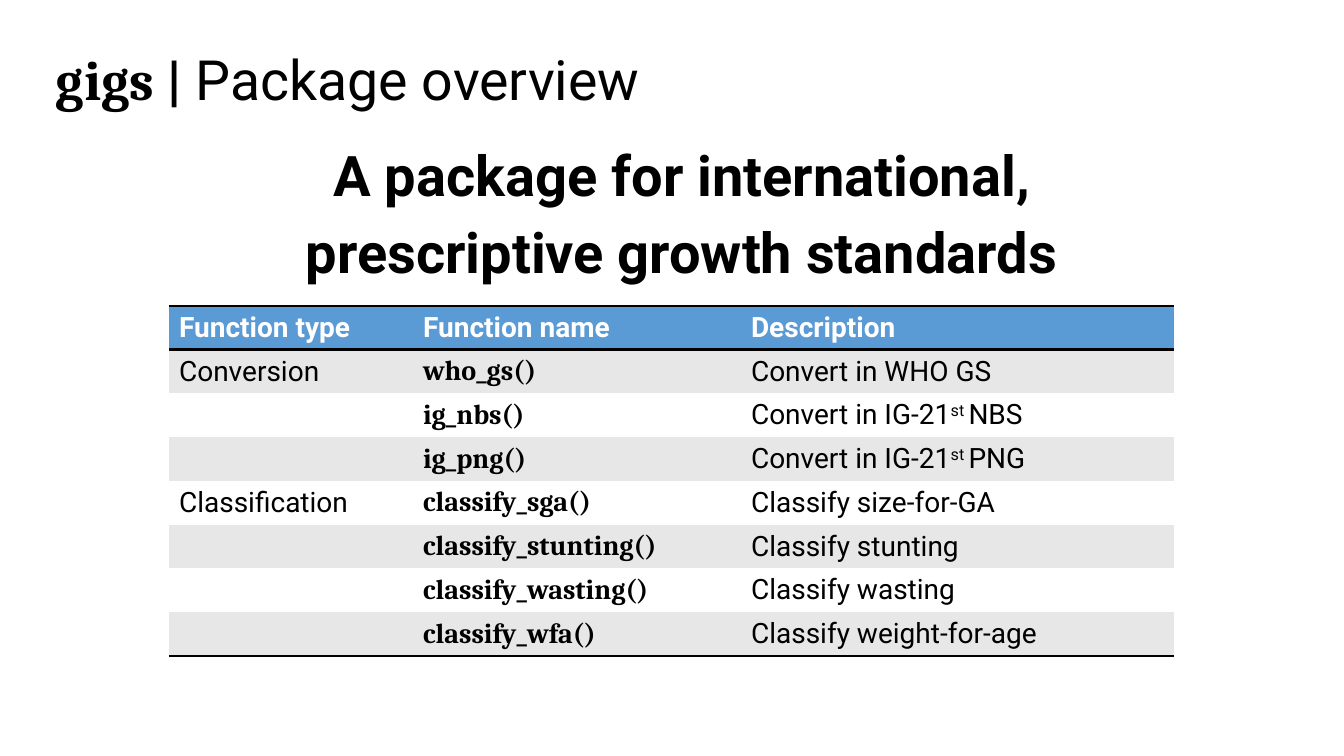
"""Build the gigs package overview slide."""
from lxml import etree
from pptx import Presentation
from pptx.dml.color import RGBColor
from pptx.enum.text import MSO_ANCHOR, PP_ALIGN
from pptx.oxml.ns import qn
from pptx.util import Pt

TOP, MIDDLE = MSO_ANCHOR.TOP, MSO_ANCHOR.MIDDLE
LEFT, CENTER = PP_ALIGN.LEFT, PP_ALIGN.CENTER
PX = 9144000 // 1008
SANS, CODE = "Roboto", "Cambria"
BLACK, WHITE, BLUE, GREY = "000000", "FFFFFF", "5B9BD5", "E7E7E7"
PLAIN_TABLE = "{2D5ABB26-0587-4C30-8999-92F81FD0307C}"

TITLE = [("gigs", CODE, True), (" | ", SANS, True), ("Package overview", SANS, False)]
TAGLINE = [("A package for international, prescriptive growth standards", SANS, True)]
HEADER = ("Function type", "Function name", "Description")
FUNCTIONS = [
    ("Conversion", "who_gs()", "Convert in WHO GS"),
    ("", "ig_nbs()", "Convert in IG-21^st ^NBS"),
    ("", "ig_png()", "Convert in IG-21^st ^PNG"),
    ("Classification", "classify_sga()", "Classify size-for-GA"),
    ("", "classify_stunting()", "Classify stunting"),
    ("", "classify_wasting()", "Classify wasting"),
    ("", "classify_wfa()", "Classify weight-for-age"),
]
COLUMN_WIDTHS = (244, 328, 433)
ROW_HEIGHT = 43
TABLE_LEFT, TABLE_TOP = 169, 306


def rgb(value):
    return RGBColor.from_string(value)


def add_run(paragraph, words, size, font, bold, color=BLACK):
    run = paragraph.add_run()
    run.text = words
    style = {"name": font, "size": Pt(size), "bold": bold}
    for key, value in style.items():
        setattr(run.font, key, value)
    run.font.color.rgb = rgb(color)
    return run


def add_text(slide, box, runs, size, align=LEFT, spacing=1.0, indent=0):
    frame = slide.shapes.add_textbox(*(n * PX for n in box)).text_frame
    layout = {"word_wrap": True, "vertical_anchor": TOP}
    layout.update({f"margin_{side}": 13 * PX for side in ("left", "right", "top", "bottom")})
    for key, value in layout.items():
        setattr(frame, key, value)
    paragraph = frame.paragraphs[0]
    paragraph.alignment, paragraph.line_spacing = align, spacing
    paragraph._p.get_or_add_pPr().set("marL", str(indent * PX))
    for words, font, bold in runs:
        add_run(paragraph, words, size, font, bold)


def add_border(cell, edge):
    line = etree.Element(qn(f"a:{edge}"), w=str(Pt(2)))
    fill = etree.SubElement(line, qn("a:solidFill"))
    etree.SubElement(fill, qn("a:srgbClr"), val=BLACK)
    properties = cell._tc.get_or_add_tcPr()
    properties.insert(len(properties.findall(qn("a:lnT"))), line)


def fill_cell(cell, words, font, bold, color, background):
    cell.fill.solid()
    cell.fill.fore_color.rgb = rgb(background)
    cell.vertical_anchor = MIDDLE
    paragraph = cell.text_frame.paragraphs[0]
    paragraph.font.size = Pt(20)
    for index, part in enumerate(words.split("^")):
        if part:
            run = add_run(paragraph, part, 20, font, bold, color)
            if index % 2:
                run._r.get_or_add_rPr().set("baseline", "30000")


def add_function_table(slide):
    rows = [HEADER, *FUNCTIONS]
    frame = slide.shapes.add_table(
        len(rows), len(HEADER), TABLE_LEFT * PX, TABLE_TOP * PX,
        sum(COLUMN_WIDTHS) * PX, len(rows) * ROW_HEIGHT * PX)
    table = frame.table
    table._tbl.tblPr.find(qn("a:tableStyleId")).text = PLAIN_TABLE
    for column, width in zip(table.columns, COLUMN_WIDTHS):
        column.width = width * PX
    for r, row in enumerate(rows):
        table.rows[r].height = ROW_HEIGHT * PX
        header = r == 0
        background = BLUE if header else GREY if r % 2 else WHITE
        for c, words in enumerate(row):
            cell = table.cell(r, c)
            code = c == 1 and not header
            fill_cell(cell, words, CODE if code else SANS, header or code,
                      WHITE if header else BLACK, background)
            if header:
                add_border(cell, "lnT")
            if header or r == len(rows) - 1:
                add_border(cell, "lnB")


def main():
    deck = Presentation()
    deck.slide_width, deck.slide_height = 1344 * PX, 756 * PX
    slide = deck.slides.add_slide(deck.slide_layouts[6])
    add_text(slide, (43, 32, 1252, 85), TITLE, 39.6)
    add_function_table(slide)
    add_text(slide, (234, 117, 876, 158), TAGLINE, 40, CENTER, 1.15, 19)
    deck.save("out.pptx")


if __name__ == "__main__":
    main()
